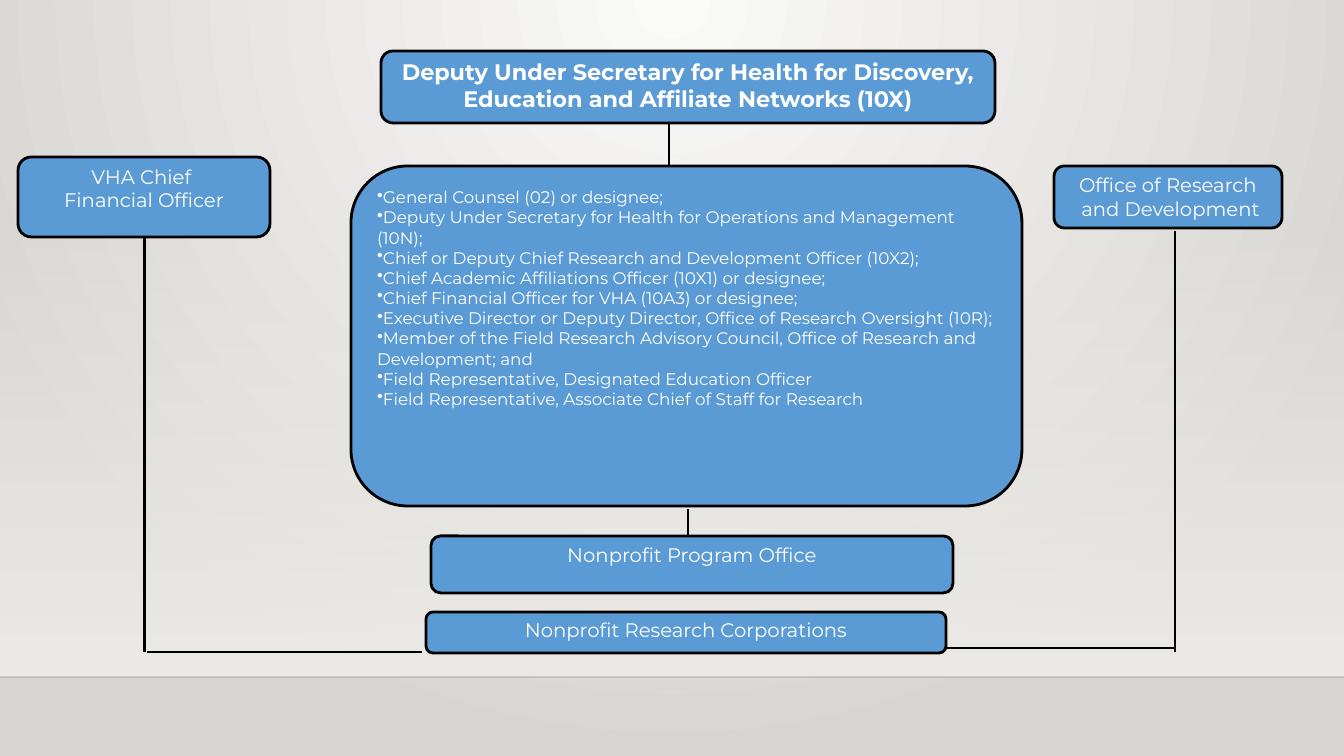
from lxml import etree
from pptx import Presentation
from pptx.dml.color import RGBColor
from pptx.enum.shapes import MSO_CONNECTOR, MSO_SHAPE
from pptx.enum.text import MSO_ANCHOR, PP_ALIGN
from pptx.oxml import parse_xml
from pptx.oxml.ns import nsdecls, qn
from pptx.util import Pt

PX = 9525 * 96 / 100.8  # EMU per px
ROUNDED, RECTANGLE = MSO_SHAPE.ROUNDED_RECTANGLE, MSO_SHAPE.RECTANGLE
STRAIGHT = MSO_CONNECTOR.STRAIGHT
TOP, CENTER, LEFT = MSO_ANCHOR.TOP, PP_ALIGN.CENTER, PP_ALIGN.LEFT
BLUE = RGBColor(0x5B, 0x9B, 0xD5)
BLACK = RGBColor(0, 0, 0)
WHITE = RGBColor(0xFF, 0xFF, 0xFF)
FONT = "Montserrat"
INSET = 4


def set_gradient(fill, owner, stops, shade):
    """Give a fill its (position, hex, opacity) stops, in percent, and a direction."""
    fill.gradient()
    stop_xml = "".join(
        f'<a:gs pos="{pos * 1000}"><a:srgbClr val="{color}">'
        f'<a:alpha val="{opacity * 1000}"/></a:srgbClr></a:gs>'
        for pos, color, opacity in stops)
    gradient = owner.find(".//" + qn("a:gradFill"))
    gradient.getparent().replace(gradient, parse_xml(
        f'<a:gradFill {nsdecls("a")} rotWithShape="1">'
        f'<a:gsLst>{stop_xml}</a:gsLst>{shade}</a:gradFill>'))


def write_text(frame, lines, size, bold=False, align=CENTER, bullet=None):
    frame.word_wrap = True
    frame.vertical_anchor = TOP
    frame.margin_left = frame.margin_right = round(INSET * PX)
    frame.margin_top = frame.margin_bottom = round(INSET * PX)
    for i, line in enumerate(lines):
        paragraph = frame.add_paragraph() if i else frame.paragraphs[0]
        paragraph.text = line
        paragraph.alignment = align
        if bullet:
            properties = paragraph._p.get_or_add_pPr()
            etree.SubElement(properties, qn("a:buChar")).set("char", bullet)
        paragraph.font.name = FONT
        paragraph.font.size = Pt(size)
        paragraph.font.bold = bold
        paragraph.font.color.rgb = WHITE


prs = Presentation()
prs.slide_width, prs.slide_height = round(1344 * PX), round(756 * PX)
slide = prs.slides.add_slide(prs.slide_layouts[6])
shapes = slide.shapes

# Backdrop: radial glow, wall fading in towards the floor
set_gradient(slide.background.fill, slide._element,
             [(0, "FAFAF9", 100), (100, "D7D5D2", 100)],
             '<a:path path="circle"><a:fillToRect l="43000" t="0" r="43000" b="100000"/></a:path>')
wall = shapes.add_shape(RECTANGLE, 0, round(222 * PX), prs.slide_width, round(455 * PX))
wall.shadow.inherit = False
wall.line.fill.background()
set_gradient(wall.fill, wall._element,
             [(0, "EDEBE7", 0), (100, "EDEBE7", 100)], '<a:lin ang="5400000" scaled="0"/>')

# Boxes of the chart: left, top, width, height, lines, size, bold
boxes = [
    (351, 166, 671, 340, [], 12, False),
    (381, 51, 614, 72, ["Deputy Under Secretary for Health for Discovery, "
                        "Education and Affiliate Networks (10X)"], 16, True),
    (18, 157, 252, 80, ["VHA Chief ", "Financial Officer"], 14, False),
    (1054, 166, 228, 62, ["Office of Research", " and Development"], 14, False),
    (426, 612, 520, 41, ["Nonprofit Research Corporations"], 14, False),
    (431, 536, 522, 57, ["Nonprofit Program Office"], 14, False),
]
for left, top, width, height, lines, size, bold in boxes:
    box = shapes.add_shape(ROUNDED, *(round(v * PX) for v in (left, top, width, height)))
    box.shadow.inherit = False
    box.adjustments[0] = 0.167
    box.fill.solid()
    box.fill.fore_color.rgb = BLUE
    box.line.color.rgb = BLACK
    box.line.width = Pt(2)
    write_text(box.text_frame, lines, size, bold)

# Board members
members = [
    "General Counsel (02) or designee;",
    "Deputy Under Secretary for Health for Operations and Management (10N);",
    "Chief or Deputy Chief Research and Development Officer (10X2);",
    "Chief Academic Affiliations Officer (10X1) or designee;",
    "Chief Financial Officer for VHA (10A3) or designee;",
    "Executive Director or Deputy Director, Office of Research Oversight (10R);",
    "Member of the Field Research Advisory Council, Office of Research and Development; and",
    "Field Representative, Designated Education Officer",
    "Field Representative, Associate Chief of Staff for Research",
]
board = shapes.add_textbox(*(round(v * PX) for v in (373, 183, 632, 326)))
write_text(board.text_frame, members, 12, align=LEFT, bullet="•")

# Floor edge and links: x1, y1, x2, y2, width, opacity in percent
links = [
    (0, 677, 1344, 677, 1, 20),
    (145, 238, 145, 652, 2, 100),
    (144, 238, 144, 652, 2, 100),
    (1175, 231, 1175, 652, 2, 100),
    (147, 652, 422, 652, 2, 100),
    (946, 648, 1175, 648, 2, 100),
    (669, 124, 669, 166, 2, 100),
    (688, 509, 688, 537, 2, 100),
]
for x1, y1, x2, y2, weight, opacity in links:
    link = shapes.add_connector(STRAIGHT, *(round(v * PX) for v in (x1, y1, x2, y2)))
    link.line.color.rgb = BLACK
    link.line.width = Pt(weight)
    if opacity < 100:
        color = link._element.spPr.find(".//" + qn("a:srgbClr"))
        etree.SubElement(color, qn("a:alpha")).set("val", str(opacity * 1000))
    etree.SubElement(link._element.spPr, qn("a:effectLst"))

prs.save("out.pptx")
